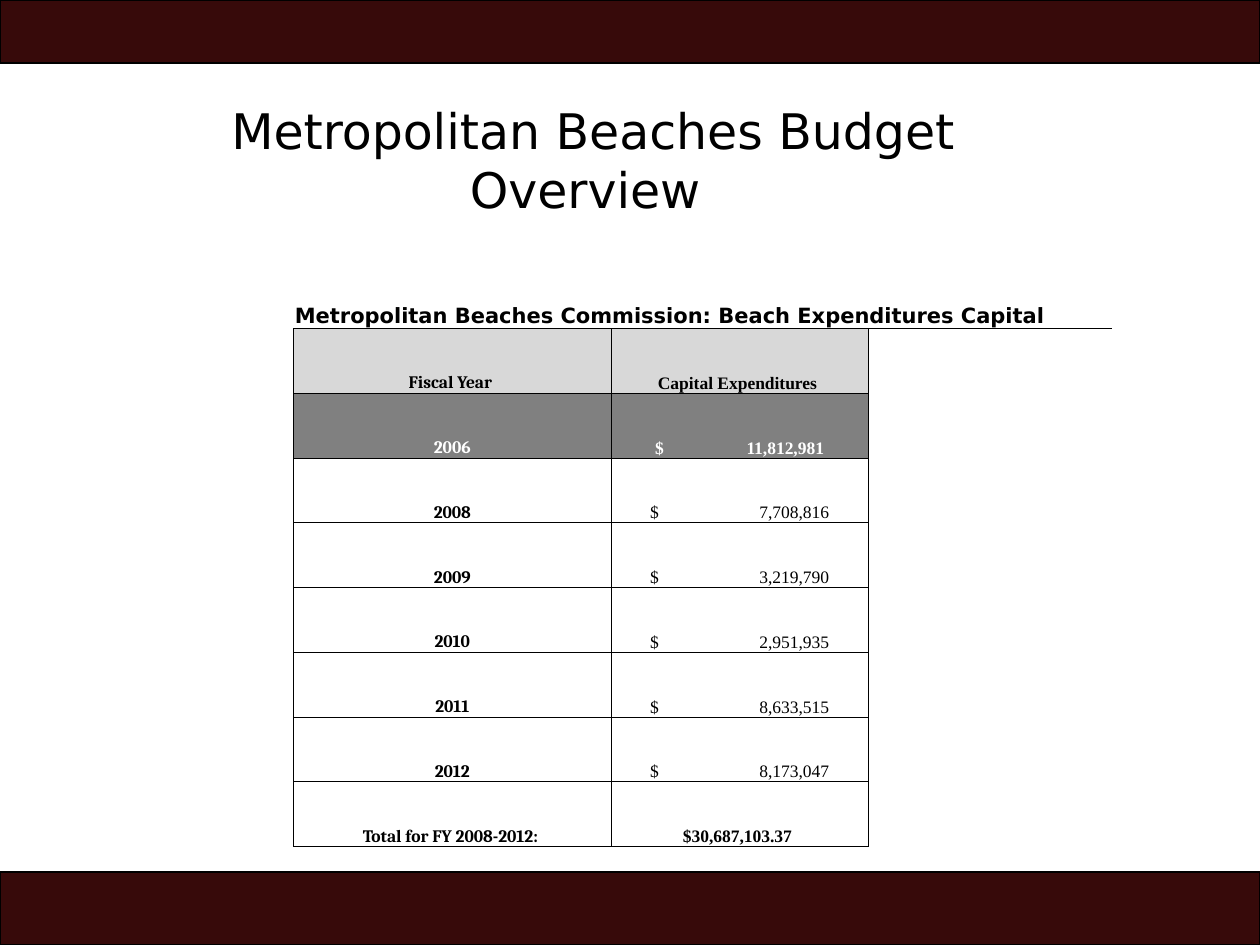
from dataclasses import dataclass

from lxml.etree import SubElement
from pptx import Presentation
from pptx.dml.color import RGBColor as Color
from pptx.enum.shapes import MSO_SHAPE as Shape
from pptx.enum.text import MSO_ANCHOR as Anchor, PP_ALIGN as Align
from pptx.oxml.ns import qn
from pptx.util import Inches, Pt


@dataclass(frozen=True)
class Theme:
    band: str = "370A0A"
    ink: str = "000000"
    paper: str = "FFFFFF"
    header: str = "D8D8D8"
    highlight: str = "808080"
    title_font: str = "DejaVu Sans"
    label_font: str = "Cambria"
    figure_font: str = "Times New Roman"
    title_size: float = 28
    caption_size: float = 12
    body_size: float = 10
    band_line: float = 0.75
    grid_line: float = 0.5
    plain_table: str = "{2D5ABB26-0587-4C30-8999-92F81FD0307C}"


class SlideBuilder:
    def __init__(self, slide, theme):
        self.slide = slide
        self.theme = theme

    def band(self, top, height):
        bar = self.slide.shapes.add_shape(
            Shape.RECTANGLE, 0, Inches(top), Inches(10), Inches(height))
        bar.shadow.inherit = False
        bar.fill.solid()
        bar.fill.fore_color.rgb = Color.from_string(self.theme.band)
        bar.line.color.rgb = Color.from_string(self.theme.ink)
        bar.line.width = Pt(self.theme.band_line)

    def add_span(self, para, text, font, size, color=None, bold=False):
        span = para.add_run()
        span.text = text
        span.font.name = font
        span.font.size = Pt(size)
        span.font.bold = bold
        span.font.color.rgb = Color.from_string(color or self.theme.ink)

    def title(self, text, left, top, width, height):
        box = self.slide.shapes.add_textbox(
            Inches(left), Inches(top), Inches(width), Inches(height))
        box.text_frame.word_wrap = True
        para = box.text_frame.paragraphs[0]
        para.alignment = Align.CENTER
        self.add_span(para, text, self.theme.title_font, self.theme.title_size)

    def table(self, left, top, widths, row_count, height):
        frame = self.slide.shapes.add_table(
            row_count, len(widths), Inches(left), Inches(top),
            Inches(sum(widths)), Inches(height))
        table = frame.table
        table.first_row = table.horz_banding = False
        frame._element.find(".//" + qn("a:tableStyleId")).text = self.theme.plain_table
        for column, width in zip(table.columns, widths):
            column.width = Inches(width)
        for row in table.rows:
            for cell in row.cells:
                cell.fill.background()
                cell.vertical_anchor = Anchor.BOTTOM
                cell.margin_left = cell.margin_right = cell.margin_top = Inches(0.01)
                cell.margin_bottom = 0
        return table

    def caption(self, cell, text):
        self.add_span(cell.text_frame.paragraphs[0], text, self.theme.title_font,
                      self.theme.caption_size, bold=True)

    def grid_cell(self, cell, text, font, fill=None, color=None, bold=True):
        properties = cell._tc.get_or_add_tcPr()
        for index, side in enumerate(("lnL", "lnR", "lnT", "lnB")):
            line = properties.makeelement(
                qn("a:" + side), {"w": str(Pt(self.theme.grid_line))})
            SubElement(SubElement(line, qn("a:solidFill")), qn("a:srgbClr"),
                       val=self.theme.ink)
            properties.insert(index, line)
        if fill:
            cell.fill.solid()
            cell.fill.fore_color.rgb = Color.from_string(fill)
        para = cell.text_frame.paragraphs[0]
        para.alignment = Align.CENTER
        if "\t" in text:
            self.align_amount(cell, para, 0.35 if bold else 0.31)
        self.add_span(para, text, font, self.theme.body_size, color, bold)

    def align_amount(self, cell, para, inset):
        para.alignment = Align.LEFT
        cell.margin_left = Inches(inset)
        stops = SubElement(para._p.get_or_add_pPr(), qn("a:tabLst"))
        SubElement(stops, qn("a:tab"), algn="r",
                   pos=str(Inches(2.04 - 2 * inset)))


def main():
    theme = Theme()
    deck = Presentation()
    deck.slide_width, deck.slide_height = Inches(10), Inches(7.5)
    page = SlideBuilder(deck.slides.add_slide(deck.slide_layouts[6]), theme)

    page.band(0, 0.5)
    page.band(6.92, 0.58)
    page.title("Metropolitan Beaches Budget Overview ", 1.33, 0.75, 6.75, 1.04)

    budget = [
        ("Fiscal Year ", "Capital Expenditures "),
        ("2006", "$\t11,812,981"),
        ("2008", "$\t7,708,816"),
        ("2009", "$\t3,219,790"),
        ("2010", "$\t2,951,935"),
        ("2011", "$\t8,633,515"),
        ("2012", "$\t8,173,047"),
        ("Total for FY 2008-2012: ", "$30,687,103.37 "),
    ]
    row_styles = {"Fiscal Year ": (theme.header, theme.ink),
                  "2006": (theme.highlight, theme.paper)}

    table = page.table(2.33, 1.58, [2.52, 2.04, 1.94], len(budget) + 2, 5.14)
    for row in range(2):
        table.cell(row, 0).merge(table.cell(row, 2))
    page.caption(table.cell(1, 0),
                 "Metropolitan Beaches Commission: Beach Expenditures Capital")
    for row, (label, amount) in enumerate(budget, start=2):
        fill, color = row_styles.get(label, (None, theme.ink))
        plain = "\t" in amount and fill is None
        page.grid_cell(table.cell(row, 0), label, theme.label_font, fill, color)
        page.grid_cell(table.cell(row, 1), amount, theme.figure_font, fill, color,
                       bold=not plain)

    deck.save("out.pptx")


if __name__ == "__main__":
    main()
